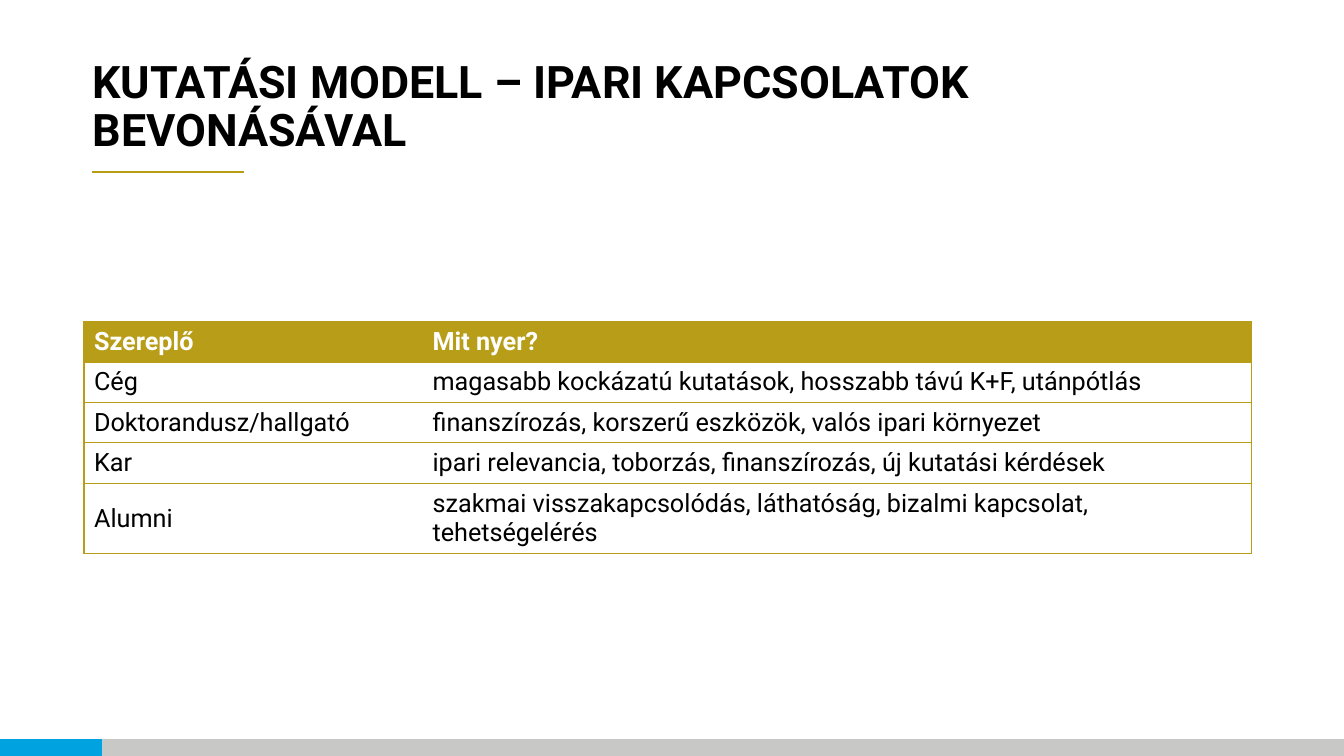
from lxml.etree import SubElement
from pptx import Presentation
from pptx.dml.color import RGBColor
from pptx.enum.shapes import MSO_CONNECTOR as Connector, MSO_SHAPE as Shape
from pptx.enum.text import MSO_ANCHOR as Anchor, PP_ALIGN as Align
from pptx.oxml.ns import qn
from pptx.util import Inches, Pt

COLORS = {"gold": "B89D18", "blue": "00A3E0", "grey": "C8C9C7",
          "black": "000000", "white": "FFFFFF"}
BENEFITS = [
    ("Szereplő", "Mit nyer?"),
    ("Cég", "magasabb kockázatú kutatások, hosszabb távú K+F, utánpótlás"),
    ("Doktorandusz/hallgató", "finanszírozás, korszerű eszközök, valós ipari környezet"),
    ("Kar", "ipari relevancia, toborzás, finanszírozás, új kutatási kérdések"),
    ("Alumni", "szakmai visszakapcsolódás, láthatóság, bizalmi kapcsolat, tehetségelérés"),
]


class SlideBuilder:
    """Draws styled elements on a page with a grid of 160 columns by 90 rows."""

    font = "Roboto"

    def __init__(self, deck):
        self.page = deck.slides.add_slide(deck.slide_layouts[6])
        self.column = deck.slide_width / 160
        self.row = deck.slide_height / 90

    def place(self, left, top, width, height):
        return (round(left * self.column), round(top * self.row),
                round(width * self.column), round(height * self.row))

    def color(self, name):
        return RGBColor.from_string(COLORS[name])

    def add_text(self, para, text, size, color, bold=False):
        run = para.add_run()
        run.text = text
        run.font.name = self.font
        run.font.size = Pt(size)
        run.font.bold = bold
        run.font.color.rgb = self.color(color)

    def title(self, text, *area):
        frame = self.page.shapes.add_textbox(*self.place(*area)).text_frame
        frame.word_wrap = True
        frame.vertical_anchor = Anchor.BOTTOM
        frame.margin_left = 0
        para = frame.paragraphs[0]
        para.alignment = Align.LEFT
        para.line_spacing = 0.9
        self.add_text(para, text, 32, "black", True)

    def bar(self, color, *area):
        box = self.page.shapes.add_shape(Shape.RECTANGLE, *self.place(*area))
        box.shadow.inherit = False
        box.fill.solid()
        box.fill.fore_color.rgb = self.color(color)
        box.line.fill.background()

    def rule(self, color, *ends):
        line = self.page.shapes.add_connector(Connector.STRAIGHT, *self.place(*ends))
        line.line.color.rgb = self.color(color)
        line.line.width = Pt(1.5)
        SubElement(line._element.spPr, qn("a:effectLst"))

    def borders(self, cell, visible):
        properties = cell._tc.get_or_add_tcPr()
        for side in "LRTB":
            line = SubElement(properties, qn(f"a:ln{side}"), w=str(Pt(1)))
            if side in visible:
                fill = SubElement(line, qn("a:solidFill"))
                SubElement(fill, qn("a:srgbClr"), val=COLORS["gold"])
            else:
                SubElement(line, qn("a:noFill"))

    def table(self, records, left, top, widths, heights):
        area = self.place(left, top, sum(widths), sum(heights))
        table = self.page.shapes.add_table(len(records), len(widths), *area).table
        for column, width in zip(table.columns, widths):
            column.width = round(width * self.column)
        for index, (record, height) in enumerate(zip(records, heights)):
            table.rows[index].height = round(height * self.row)
            header = index == 0
            for position, text in enumerate(record):
                cell = table.cell(index, position)
                self.borders(cell, ("LTB", "RTB")[position])
                cell.fill.solid()
                cell.fill.fore_color.rgb = self.color("gold" if header else "white")
                cell.vertical_anchor = Anchor.MIDDLE
                self.add_text(cell.text_frame.paragraphs[0], text, 18,
                              "white" if header else "black", header)


def main():
    deck = Presentation()
    deck.slide_width, deck.slide_height = Inches(13.33), Inches(7.5)
    slide = SlideBuilder(deck)
    slide.rule("gold", 11, 20.5, 29, 20.5)
    slide.bar("blue", 0, 88, 12.2, 2)
    slide.bar("grey", 12.2, 88, 147.8, 2)
    slide.title("KUTATÁSI MODELL – IPARI KAPCSOLATOK BEVONÁSÁVAL", 11, 4.4, 138, 14.8)
    slide.table(BENEFITS, 10, 38.3, (40.3, 98.7), [4.7] * 4 + [8.2])
    deck.save("out.pptx")


if __name__ == "__main__":
    main()
